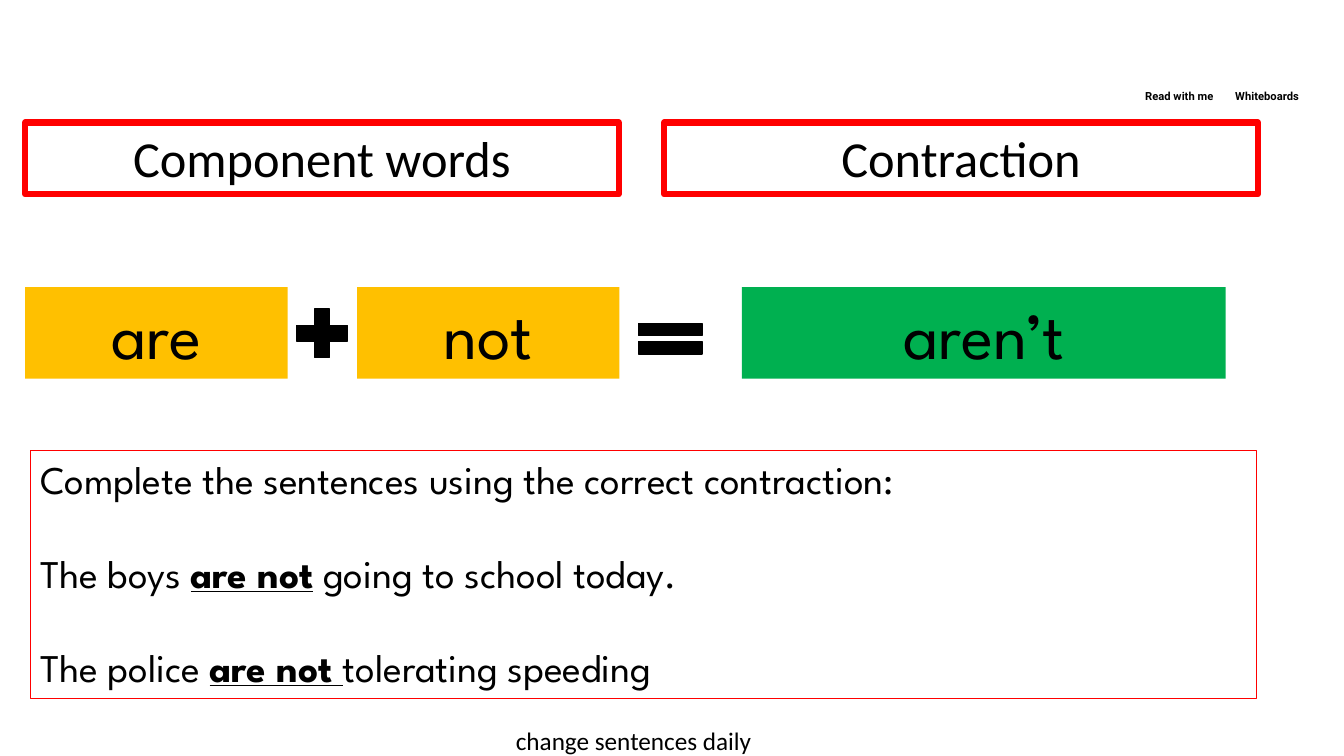
"""Build a slide on joining two words into a contraction."""
from pptx import Presentation
from pptx.dml.color import RGBColor
from pptx.enum.shapes import MSO_SHAPE as SHAPE
from pptx.enum.text import MSO_ANCHOR as ANCHOR, PP_ALIGN as ALIGN
from pptx.util import Pt

COLORS = {"black": "000000", "red": "FF0000", "amber": "FFC000", "green": "00B050"}


def add_text(p, text, font="League Spartan", size=28, bold=False, underline=False):
    r = p.add_run()
    r.text = text
    r.font.name = font
    r.font.size = Pt(size)
    r.font.bold = bold
    r.font.underline = underline
    r.font.color.rgb = RGBColor.from_string(COLORS["black"])


def add_box(kind, x, y, w, h, fill=None, line=None, width=1):
    sp = s.shapes.add_shape(kind, Pt(x), Pt(y), Pt(w), Pt(h))
    sp.shadow.inherit = False
    if fill:
        sp.fill.solid()
        sp.fill.fore_color.rgb = RGBColor.from_string(COLORS[fill])
    else:
        sp.fill.background()
    if line:
        sp.line.color.rgb = RGBColor.from_string(COLORS[line])
        sp.line.width = Pt(width)
    else:
        sp.line.fill.background()
    tf = sp.text_frame
    tf.word_wrap = True
    tf.vertical_anchor = ANCHOR.TOP
    return tf


prs = Presentation()
prs.slide_width, prs.slide_height = Pt(960), Pt(540)
s = prs.slides.add_slide(prs.slide_layouts[6])

for x, heading in [(18, "Component words"), (474.5, "Contraction")]:
    p = add_box(SHAPE.RECTANGLE, x, 87.6, 424, 51.2, line="red", width=4.5).paragraphs[0]
    p.alignment = ALIGN.CENTER
    add_text(p, heading, font="Calibri", size=36)

for x, w, fill, word in [
    (18, 187.4, "amber", "are"),
    (255, 187.4, "amber", "not"),
    (530, 345.6, "green", "aren’t"),
]:
    p = add_box(SHAPE.RECTANGLE, x, 205, w, 65.4, fill=fill).paragraphs[0]
    p.alignment = ALIGN.CENTER
    add_text(p, word, size=48)

add_box(SHAPE.MATH_PLUS, 205.2, 214.6, 49.7, 46.8, fill="black", line="black")
add_box(SHAPE.MATH_EQUAL, 447.8, 223.2, 61.9, 37.4, fill="black", line="black")

sentences = [
    ("Complete the sentences using the correct contraction:", "", ""),
    ("The boys ", "are not", " going to school today."),
    ("The police ", "are not ", "tolerating speeding"),
]
tf = add_box(SHAPE.RECTANGLE, 21.6, 321.8, 876.2, 177.1, line="red", width=0.75)
for i, (start, target, end) in enumerate(sentences):
    p = tf.add_paragraph() if i else tf.paragraphs[0]
    p.alignment = ALIGN.LEFT
    if i:
        p.space_before = Pt(33.5)
    add_text(p, start)
    if target:
        add_text(p, target, bold=True, underline=True)
        add_text(p, end)

for x, y, w, h, text, font, size, bold, align, spacing in [
    (796.3, 61.2, 92.2, 18.7, "Read with me", "Roboto", 8, True, ALIGN.CENTER, 0.9),
    (859, 61.2, 92.2, 18.7, "Whiteboards", "Roboto", 8, True, ALIGN.CENTER, 0.9),
    (361.4, 514.8, 283, 28.8, "change sentences daily", "Calibri", 18, False, ALIGN.LEFT, 1.0),
]:
    tf = s.shapes.add_textbox(Pt(x), Pt(y), Pt(w), Pt(h)).text_frame
    tf.word_wrap = True
    p = tf.paragraphs[0]
    p.alignment = align
    p.line_spacing = spacing
    add_text(p, text, font=font, size=size, bold=bold)

prs.save("out.pptx")
